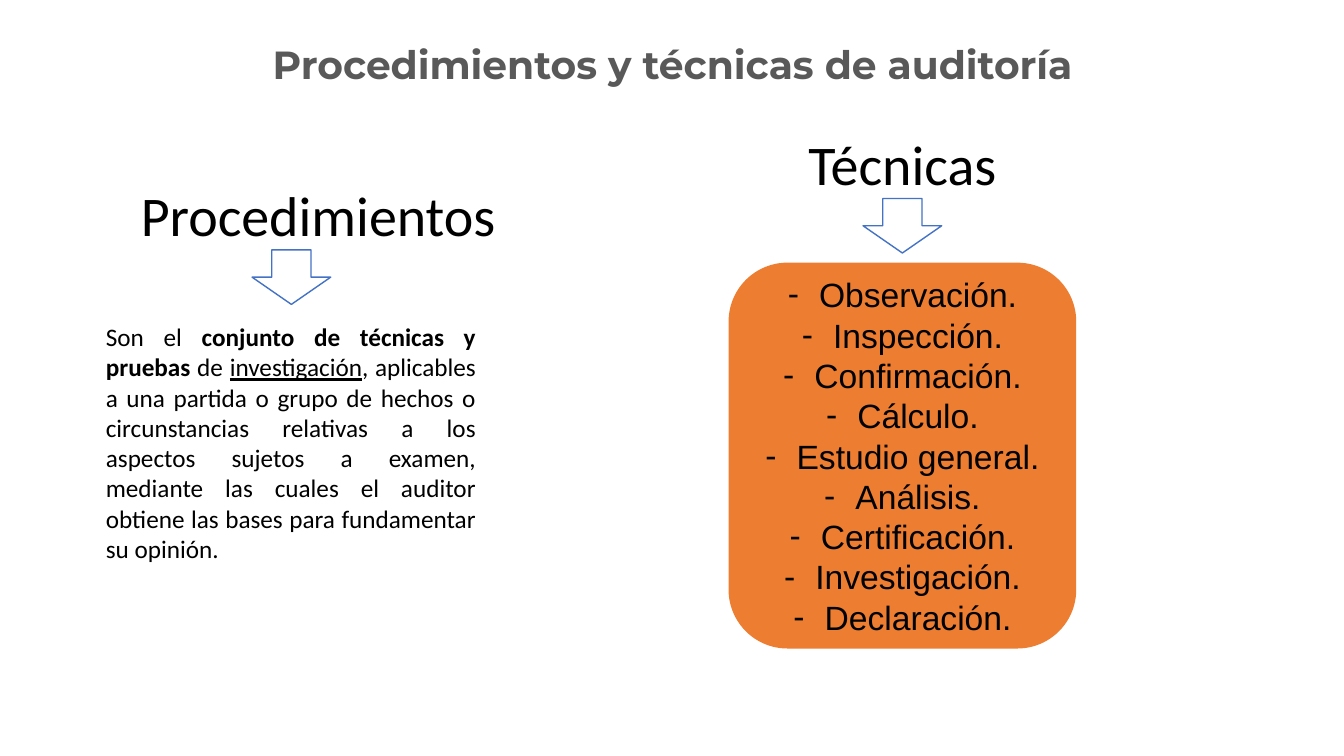
from dataclasses import dataclass

from lxml.etree import SubElement
from pptx import Presentation
from pptx.dml.color import RGBColor
from pptx.enum.shapes import MSO_SHAPE
from pptx.enum.text import MSO_ANCHOR, MSO_AUTO_SIZE, PP_ALIGN
from pptx.oxml.ns import qn
from pptx.shapes.autoshape import Shape
from pptx.slide import Slide
from pptx.text.text import TextFrame, _Paragraph
from pptx.util import Inches, Pt

BLACK = RGBColor(0x00, 0x00, 0x00)
WHITE = RGBColor(0xFF, 0xFF, 0xFF)
GRAY = RGBColor(0x59, 0x59, 0x59)
ORANGE = RGBColor(0xED, 0x7D, 0x31)
BLUE = RGBColor(0x44, 0x72, 0xC4)

TECHNIQUES = [
    "Observación.", "Inspección.", "Confirmación.", "Cálculo.", "Estudio general.",
    "Análisis.", "Certificación.", "Investigación.", "Declaración.",
]


@dataclass(frozen=True)
class Box:
    left: float
    top: float
    width: float
    height: float

    def lengths(self) -> tuple[int, int, int, int]:
        return Inches(self.left), Inches(self.top), Inches(self.width), Inches(self.height)


@dataclass(frozen=True)
class Run:
    text: str
    bold: bool = False
    underline: bool = False


@dataclass(frozen=True)
class Heading:
    text: str
    box: Box
    arrow: Box


HEADINGS = [
    Heading("Procedimientos", Box(1.27, 1.74, 3.77, 0.77), Box(2.5, 2.48, 0.78, 0.54)),
    Heading("Técnicas", Box(7.88, 1.24, 2.14, 0.77), Box(8.56, 1.97, 0.78, 0.54)),
]

DEFINITION = [
    Run("Son el "),
    Run("conjunto de técnicas y pruebas", bold=True),
    Run(" de "),
    Run("investigación", underline=True),
    Run(", aplicables a una partida o grupo de hechos o circunstancias relativas a los "
        "aspectos sujetos a examen, mediante las cuales el auditor obtiene las bases para "
        "fundamentar su opinión."),
]


def add_dash(paragraph: _Paragraph) -> None:
    properties = paragraph._p.get_or_add_pPr()
    properties.set("marL", str(Inches(0.31)))
    properties.set("indent", str(Inches(-0.31)))
    SubElement(properties, qn("a:buFont"), typeface="Arial")
    SubElement(properties, qn("a:buChar"), char="-")


def write(frame: TextFrame, paragraphs: list[list[Run]], *, size: float,
          font: str = "Calibri", color: RGBColor = BLACK,
          alignment: PP_ALIGN = PP_ALIGN.CENTER, anchor: MSO_ANCHOR = MSO_ANCHOR.TOP,
          wrap: bool = True, inset: float | None = None,
          line_spacing: float | None = None, dashes: bool = False) -> None:
    frame.word_wrap = wrap
    frame.vertical_anchor = anchor
    if inset is not None:
        frame.margin_left = frame.margin_right = Inches(inset)
        frame.margin_top = frame.margin_bottom = Inches(inset)
    for index, runs in enumerate(paragraphs):
        paragraph = frame.add_paragraph() if index else frame.paragraphs[0]
        paragraph.alignment = alignment
        if line_spacing:
            paragraph.line_spacing = line_spacing
        if dashes:
            add_dash(paragraph)
        for item in runs:
            run = paragraph.add_run()
            run.text = item.text
            run.font.name = font
            run.font.size = Pt(size)
            run.font.bold = item.bold
            run.font.underline = item.underline
            run.font.color.rgb = color


def add_filled_shape(slide: Slide, kind: MSO_SHAPE, box: Box, *, fill: RGBColor,
                     line: RGBColor, line_width: float) -> Shape:
    shape = slide.shapes.add_shape(kind, *box.lengths())
    shape.shadow.inherit = False
    shape.fill.solid()
    shape.fill.fore_color.rgb = fill
    shape.line.color.rgb = line
    shape.line.width = Pt(line_width)
    return shape


def add_title(slide: Slide) -> None:
    title = slide.shapes.title
    title.left, title.top, title.width, title.height = Box(0.92, 0.4, 11.5, 0.74).lengths()
    title.text_frame.auto_size = MSO_AUTO_SIZE.NONE
    write(title.text_frame, [[Run("Procedimientos y técnicas de auditoría", bold=True)]],
          size=28, font="Montserrat", color=GRAY, inset=0.05, line_spacing=0.9)


def add_heading(slide: Slide, heading: Heading) -> None:
    text_box = slide.shapes.add_textbox(*heading.box.lengths())
    write(text_box.text_frame, [[Run(heading.text)]], size=40, wrap=False)
    add_filled_shape(slide, MSO_SHAPE.DOWN_ARROW, heading.arrow,
                     fill=WHITE, line=BLUE, line_width=1)


def add_definition(slide: Slide) -> None:
    text_box = slide.shapes.add_textbox(*Box(1, 3.14, 3.77, 2.52).lengths())
    write(text_box.text_frame, [DEFINITION], size=18,
          alignment=PP_ALIGN.JUSTIFY, inset=0.05)


def add_techniques(slide: Slide) -> None:
    panel = add_filled_shape(slide, MSO_SHAPE.ROUNDED_RECTANGLE, Box(7.24, 2.62, 3.42, 3.8),
                             fill=ORANGE, line=ORANGE, line_width=2)
    write(panel.text_frame, [[Run(technique)] for technique in TECHNIQUES], size=24,
          font="Arial", anchor=MSO_ANCHOR.MIDDLE, dashes=True)


def main() -> None:
    presentation = Presentation()
    presentation.slide_width = Inches(13.33)
    presentation.slide_height = Inches(7.5)
    slide = presentation.slides.add_slide(presentation.slide_layouts.get_by_name("Title Only"))
    add_title(slide)
    add_techniques(slide)
    for heading in HEADINGS:
        add_heading(slide, heading)
    add_definition(slide)
    presentation.save("out.pptx")


if __name__ == "__main__":
    main()
